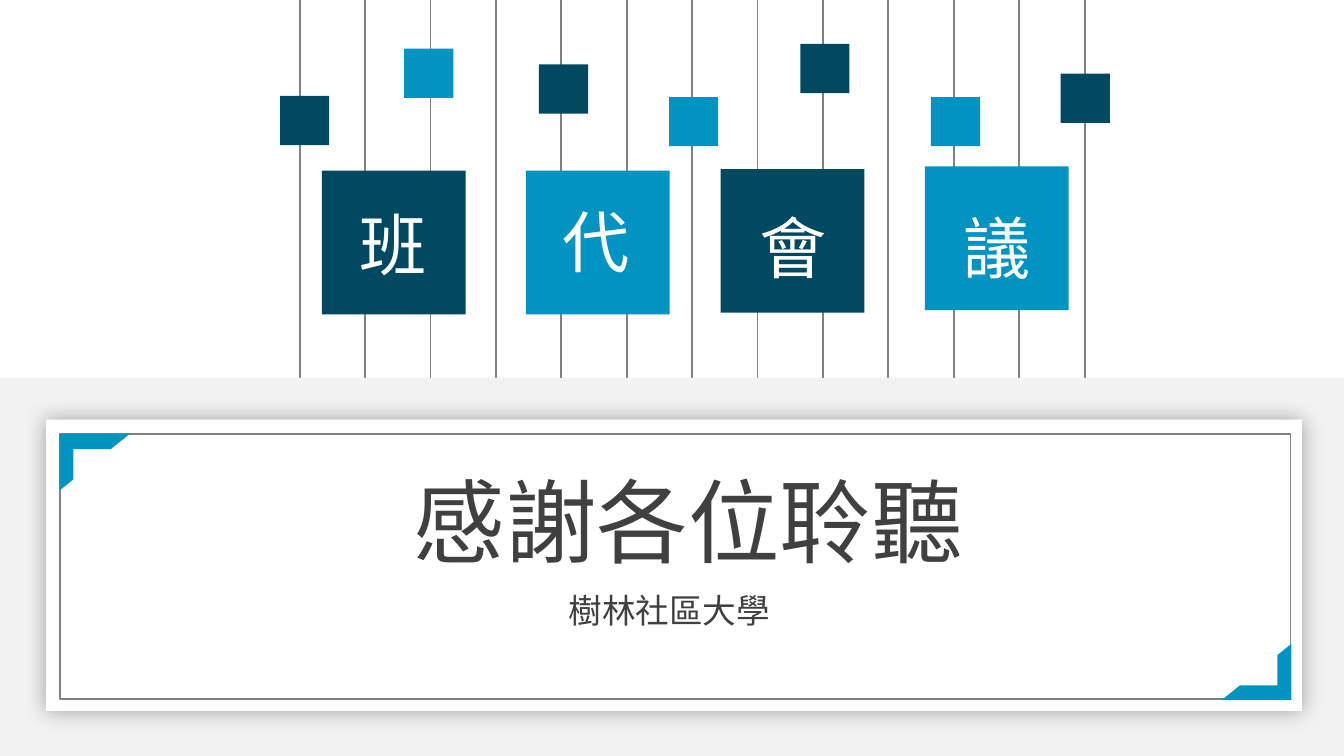
from lxml import etree
from pptx import Presentation
from pptx import util as u
from pptx.dml.color import RGBColor
from pptx.enum import shapes, text
from pptx.oxml import ns

FONT = "Noto Sans CJK SC"
NAVY, BLUE, GRAY = "004961", "0193C2", "808080"
PALE, WHITE, INK = "F2F2F2", "FFFFFF", "404040"

# Left, top and colour of the small squares
SQUARES = [
    (150, 51.4, NAVY), (216.5, 26.1, BLUE), (288.7, 34.5, NAVY),
    (358.4, 52, BLUE), (498.7, 52, BLUE), (568.2, 39.5, NAVY),
    (428.7, 23.5, NAVY),
]

# Character, tile left and top, label left and top, tile colour
TILES = [
    ("班", 172.5, 91.5, 185.3, 104.9, NAVY),
    ("代", 281.8, 91.5, 293.7, 103.5, BLUE),
    ("會", 386.1, 90.6, 399.4, 106.6, NAVY),
    ("議", 495.5, 89.2, 508.5, 106.6, BLUE),
]


def color(code):
    return RGBColor.from_string(code)


def add_element(parent, tag, **attributes):
    return etree.SubElement(parent, ns.qn(tag), attributes)


def add_block(page, area, fill=None, line=None, kind="RECTANGLE"):
    block = page.shapes.add_shape(
        getattr(shapes.MSO_SHAPE, kind), *[u.Pt(value) for value in area])
    block.shadow.inherit = False
    if fill:
        block.fill.solid()
        block.fill.fore_color.rgb = color(fill)
    else:
        block.fill.background()
    if line:
        block.line.color.rgb = color(line)
        block.line.width = u.Pt(1)
    else:
        block.line.fill.background()
    return block


def add_thread(page, left, bottom):
    thread = page.shapes.add_connector(
        shapes.MSO_CONNECTOR.STRAIGHT,
        u.Pt(left), u.Pt(0), u.Pt(left), u.Pt(bottom))
    thread.line.color.rgb = color(GRAY)
    thread.line.width = u.Pt(1)
    add_element(thread._element.spPr, "a:effectLst")


def add_text(page, area, words, size, ink):
    box = page.shapes.add_textbox(*[u.Pt(value) for value in area])
    frame = box.text_frame
    settings = {
        "word_wrap": True, "vertical_anchor": text.MSO_ANCHOR.MIDDLE,
        "margin_left": 0, "margin_right": 0,
        "margin_top": 0, "margin_bottom": 0,
    }
    for name, value in settings.items():
        setattr(frame, name, value)
    para = frame.paragraphs[0]
    para.alignment = text.PP_ALIGN.CENTER
    span = para.add_run()
    span.text = words
    for name, value in {"name": FONT, "size": u.Pt(size)}.items():
        setattr(span.font, name, value)
    span.font.color.rgb = color(ink)
    # The East Asian typeface has no public setting
    add_element(span._r.get_or_add_rPr(), "a:ea", typeface=FONT)


def add_glow(block):
    effects = block._element.spPr.find(ns.qn("a:effectLst"))
    shadow = add_element(
        effects, "a:outerShdw", blurRad=str(u.Pt(12)), dist="0", dir="0",
        algn="ctr", rotWithShape="0")
    black = add_element(shadow, "a:srgbClr", val="000000")
    add_element(black, "a:alpha", val="33000")


def add_corner(page, left, top, turn):
    corner = add_block(page, (left, top, 37.4, 30.2), BLUE, kind="HALF_FRAME")
    corner.adjustments[0] = 0.264
    corner.adjustments[1] = 0.247
    corner.rotation = turn


def main():
    deck = Presentation()
    deck.slide_width, deck.slide_height = u.Pt(720), u.Pt(405)
    page = deck.slides.add_slide(deck.slide_layouts[6])

    # Evenly spaced threads
    for index in range(13):
        add_thread(page, 160.5 + 35.05 * index, 202.5)

    # Small squares
    for left, top, fill in SQUARES:
        add_block(page, (left, top, 26.4, 26.4), fill)

    # Title tiles
    for word, left, top, label_left, label_top, fill in TILES:
        add_block(page, (left, top, 77, 77), fill)
        add_text(page, (label_left, label_top, 51, 51), word, 36, WHITE)

    # Lower band with the framed card
    add_block(page, (0, 202.5, 720, 202.5), PALE)
    card = add_block(page, (24.7, 224.8, 672.8, 156.1), WHITE)
    add_glow(card)
    add_block(page, (32.2, 232.7, 659.2, 141.8), line=GRAY)
    add_corner(page, 31.9, 232.6, 0)
    add_corner(page, 654.4, 344.9, 180)

    # Closing words
    add_text(page, (162, 244.8, 413.3, 67), "感謝各位聆聽", 49, INK)
    add_text(page, (166.3, 312.5, 384.5, 28.8), "樹林社區大學", 18, INK)

    deck.save("out.pptx")


if __name__ == "__main__":
    main()
